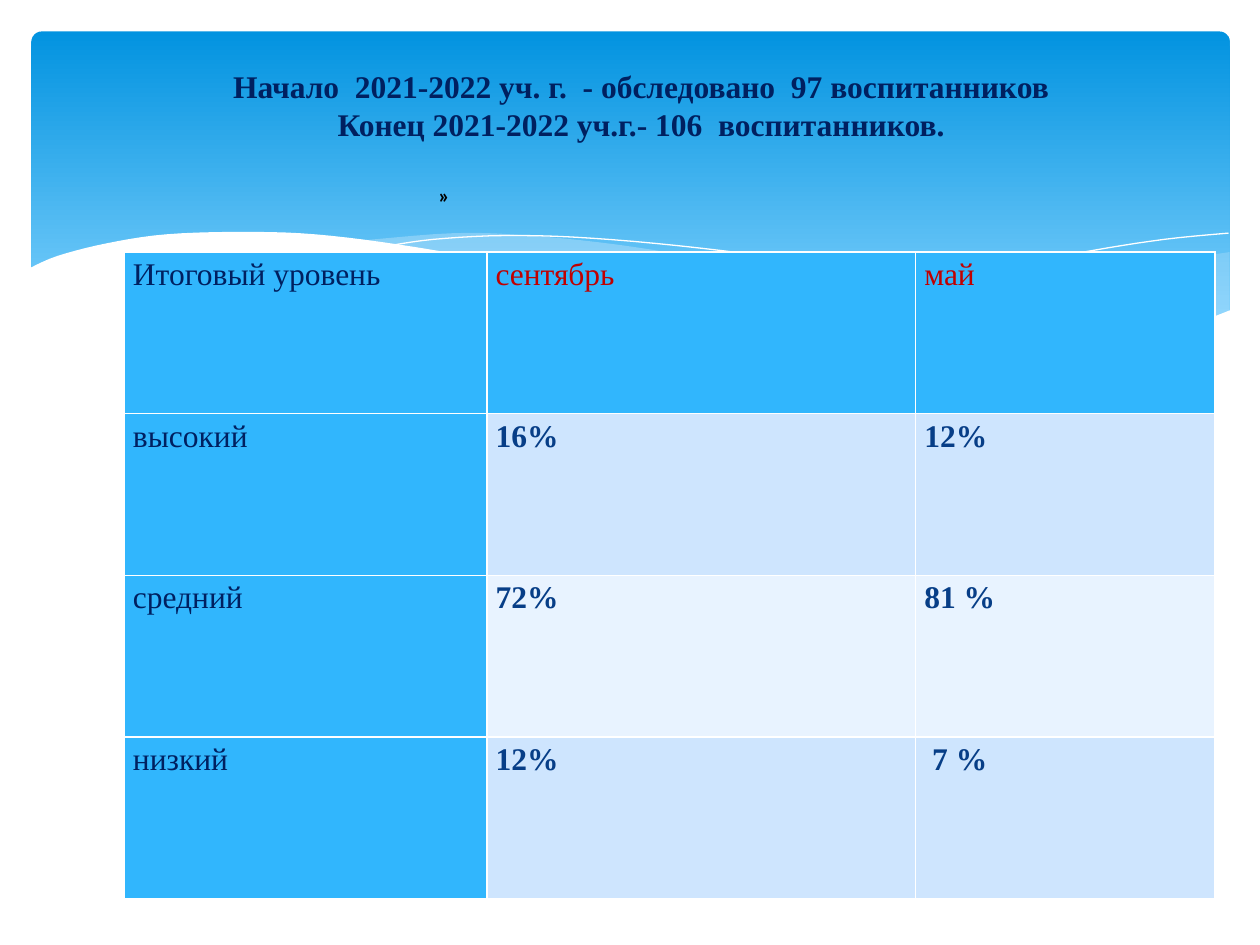
from dataclasses import dataclass
from typing import Optional

from lxml import etree
from pptx import Presentation
from pptx.dml.color import RGBColor
from pptx.enum.shapes import MSO_SHAPE
from pptx.enum.text import MSO_ANCHOR, MSO_AUTO_SIZE, PP_ALIGN
from pptx.oxml.ns import qn
from pptx.util import Pt

ROUND_RECT = MSO_SHAPE.ROUNDED_RECTANGLE
LEFT, CENTER, JUSTIFY = PP_ALIGN.LEFT, PP_ALIGN.CENTER, PP_ALIGN.JUSTIFY
TOP, MIDDLE = MSO_ANCHOR.TOP, MSO_ANCHOR.MIDDLE
NO_AUTOFIT = MSO_AUTO_SIZE.NONE

COLORS = {
    "white": "FFFFFF", "black": "000000", "navy": "002060", "red": "C00000",
    "value": "073E87", "sky_top": "0293E0", "sky_bottom": "83D3FE",
    "mist": "C6E7FC", "header": "31B6FD", "band": "CEE5FE", "band_light": "E8F3FF",
}

Points = list[tuple[float, float]]


@dataclass
class Wave:
    curves: list[Points]
    fill: Optional[str] = None
    alpha: int = 100


@dataclass
class Cell:
    text: str
    fill: str
    color: str
    bold: bool = False
    align: PP_ALIGN = LEFT
    indent: float = 0


WAVES = [
    Wave([[(702.7, 144), (673.2, 149), (619.9, 160.6), (560.9, 174.2),
           (508.3, 185), (475.9, 190.8)],
          [(475.9, 190.8), (517.7, 195.8), (553.7, 199.4), (586, 200.2),
           (621.4, 198), (657.4, 192.2), (683.3, 185), (702.7, 177.8)]],
         "mist", 29),
    Wave([[(643, 196.6), (602.6, 190.8), (533.5, 177.8), (452.9, 159.8),
           (399.6, 147.6), (352.1, 139.7), (302.4, 134.6), (259.9, 133.2),
           (205.9, 137.5)],
          [(205.9, 137.5), (260.6, 146.2), (323.3, 159.8), (381.6, 172.8),
           (445, 185.8), (500.4, 194.4), (547.9, 199.4), (589, 200.2),
           (624.2, 198.7), (643, 196.6)]],
         "mist", 40),
    Wave([[(222.5, 140.4), (247.7, 136.8), (288.7, 134.6), (337.7, 136.1),
           (400.3, 141.8), (457.9, 149.8), (523.4, 162.7), (598.3, 180.7),
           (653, 195.8)]]),
    Wave([[(441.4, 185), (500.4, 169.2), (558.7, 155.5), (623.5, 143.3),
           (665.3, 136.8), (702, 133.2)]]),
    Wave([[(16.6, 153.4), (33, 146.2), (61.2, 139), (95, 133.9), (139, 132.5),
           (180, 133.9), (227.5, 139.7), (281.5, 149), (321.8, 158.4),
           (380.9, 172.1), (434.2, 182.9), (495.4, 193), (547.9, 198),
           (582.5, 199.4), (621.4, 197.3), (655.2, 192.2), (684, 184.3),
           (703.4, 177.1)],
          [(703.4, 236.9), (16.6, 236.9)]],
         "white"),
]

TITLE = ("Начало  2021-2022 уч. г.  - обследовано  97 воспитанников\n"
         "Конец 2021-2022 уч.г.- 106  воспитанников.")
HEADINGS = [("Итоговый уровень", "navy"), ("сентябрь", "red"), ("май", "red")]
LEVELS = [("высокий", "16%", "12%"), ("средний", "72%", "81 %"), ("низкий", "12%", "7 %")]
COLUMN_WIDTHS = [207.2, 245, 171.2]
ROW_HEIGHT = 92.4


def rgb(name: str) -> RGBColor:
    return RGBColor.from_string(COLORS[name])


def write(p, text: str, *, size: float = 18, font: str = "Times New Roman",
          color: str = "navy", bold: bool = False, align: PP_ALIGN = LEFT,
          spacing: float = 1.0) -> None:
    p.alignment = align
    p.line_spacing = spacing
    for i, line in enumerate(text.split("\n")):
        if i:
            p.add_line_break()
        r = p.add_run()
        r.text = line
        r.font.size, r.font.name, r.font.bold = Pt(size), font, bold
        r.font.color.rgb = rgb(color)


def smooth(keys: Points, steps: int = 5) -> Points:
    """Catmull-Rom curve through the key points."""
    ends = [keys[0], *keys, keys[-1]]
    curve = [keys[0]]
    for a, b, c, d in zip(ends, ends[1:], ends[2:], ends[3:]):
        for t in (n / steps for n in range(1, steps + 1)):
            x, y = (0.5 * (2 * q + (r - p) * t + (2 * p - 5 * q + 4 * r - s) * t ** 2
                           + (3 * q - p - 3 * r + s) * t ** 3)
                    for p, q, r, s in zip(a, b, c, d))
            curve.append((x, y))
    return curve


def draw_wave(shapes, wave: Wave) -> None:
    points = [(Pt(x), Pt(y)) for keys in wave.curves for x, y in smooth(keys)]
    builder = shapes.build_freeform(*points[0])
    builder.add_line_segments(points[1:], close=wave.fill is not None)
    sp = builder.convert_to_shape()
    sp.shadow.inherit = False
    if wave.fill is None:
        sp.fill.background()
        sp.line.color.rgb = rgb("white")
        sp.line.width = Pt(0)
        return
    sp.line.fill.background()
    sp.fill.solid()
    sp.fill.fore_color.rgb = rgb(wave.fill)
    if wave.alpha < 100:
        color = sp._element.spPr.find(f"{qn('a:solidFill')}/{qn('a:srgbClr')}")
        etree.SubElement(color, qn("a:alpha"), val=str(wave.alpha * 1000))


def draw_sky(shapes) -> None:
    sp = shapes.add_shape(ROUND_RECT, Pt(18), Pt(18), Pt(684.7), Pt(194.4))
    sp.adjustments[0] = 0.03
    sp.shadow.inherit = False
    sp.line.fill.background()
    sp.fill.gradient()
    sp.fill.gradient_angle = 270
    stops = zip(sp.fill.gradient_stops, (0, 0.9), ("sky_top", "sky_bottom"))
    for stop, position, color in stops:
        stop.position = position
        stop.color.rgb = rgb(color)


def draw_cell(cell, content: Cell) -> None:
    cell.margin_left, cell.margin_right = Pt(5 + content.indent), Pt(5)
    cell.margin_top = cell.margin_bottom = Pt(0)
    tc_pr = cell._tc.get_or_add_tcPr()
    for side in ("lnL", "lnR", "lnT", "lnB"):
        ln = etree.SubElement(tc_pr, qn(f"a:{side}"), w=str(Pt(1)))
        fill = etree.SubElement(ln, qn("a:solidFill"))
        etree.SubElement(fill, qn("a:srgbClr"), val=COLORS["white"])
    cell.fill.solid()
    cell.fill.fore_color.rgb = rgb(content.fill)
    write(cell.text_frame.paragraphs[0], content.text, color=content.color,
          bold=content.bold, align=content.align, spacing=1.15)


def draw_table(shapes, rows: list[list[Cell]]) -> None:
    frame = shapes.add_table(len(rows), len(COLUMN_WIDTHS), Pt(71), Pt(144),
                             Pt(sum(COLUMN_WIDTHS)), Pt(ROW_HEIGHT * len(rows)))
    table = frame.table
    for column, width in zip(table.columns, COLUMN_WIDTHS):
        column.width = Pt(width)
    for row, contents in zip(table.rows, rows):
        row.height = Pt(ROW_HEIGHT)
        for cell, content in zip(row.cells, contents):
            draw_cell(cell, content)


def main() -> None:
    prs = Presentation()
    prs.slide_width, prs.slide_height = Pt(720), Pt(540)
    s = prs.slides.add_slide(prs.slide_layouts[5])

    # Background: sky panel and waves
    draw_sky(s.shapes)
    for wave in WAVES:
        draw_wave(s.shapes, wave)

    # Title, raised above the background
    title = s.shapes.title
    s.shapes._spTree.append(title._element)
    title.left, title.top, title.width, title.height = Pt(48.2), Pt(26), Pt(636.5), Pt(67.7)
    tf = title.text_frame
    tf.auto_size, tf.vertical_anchor, tf.word_wrap = NO_AUTOFIT, MIDDLE, True
    write(tf.paragraphs[0], TITLE, bold=True, align=CENTER)

    # Closing quotation mark
    tf = s.shapes.add_textbox(Pt(243.4), Pt(101), Pt(21), Pt(44)).text_frame
    tf.word_wrap, tf.vertical_anchor = False, TOP
    write(tf.paragraphs[0], "»", size=12, font="Calibri", color="black", bold=True)

    # Table of levels
    rows = [[Cell(text, "header", color) for text, color in HEADINGS]]
    for i, (level, *values) in enumerate(LEVELS):
        band = "band_light" if i % 2 else "band"
        rows.append([Cell(level, "header", "navy")]
                    + [Cell(v, band, "value", True, JUSTIFY) for v in values])
    rows[-1][-1].indent = 4.5
    draw_table(s.shapes, rows)

    prs.save("out.pptx")


if __name__ == "__main__":
    main()
